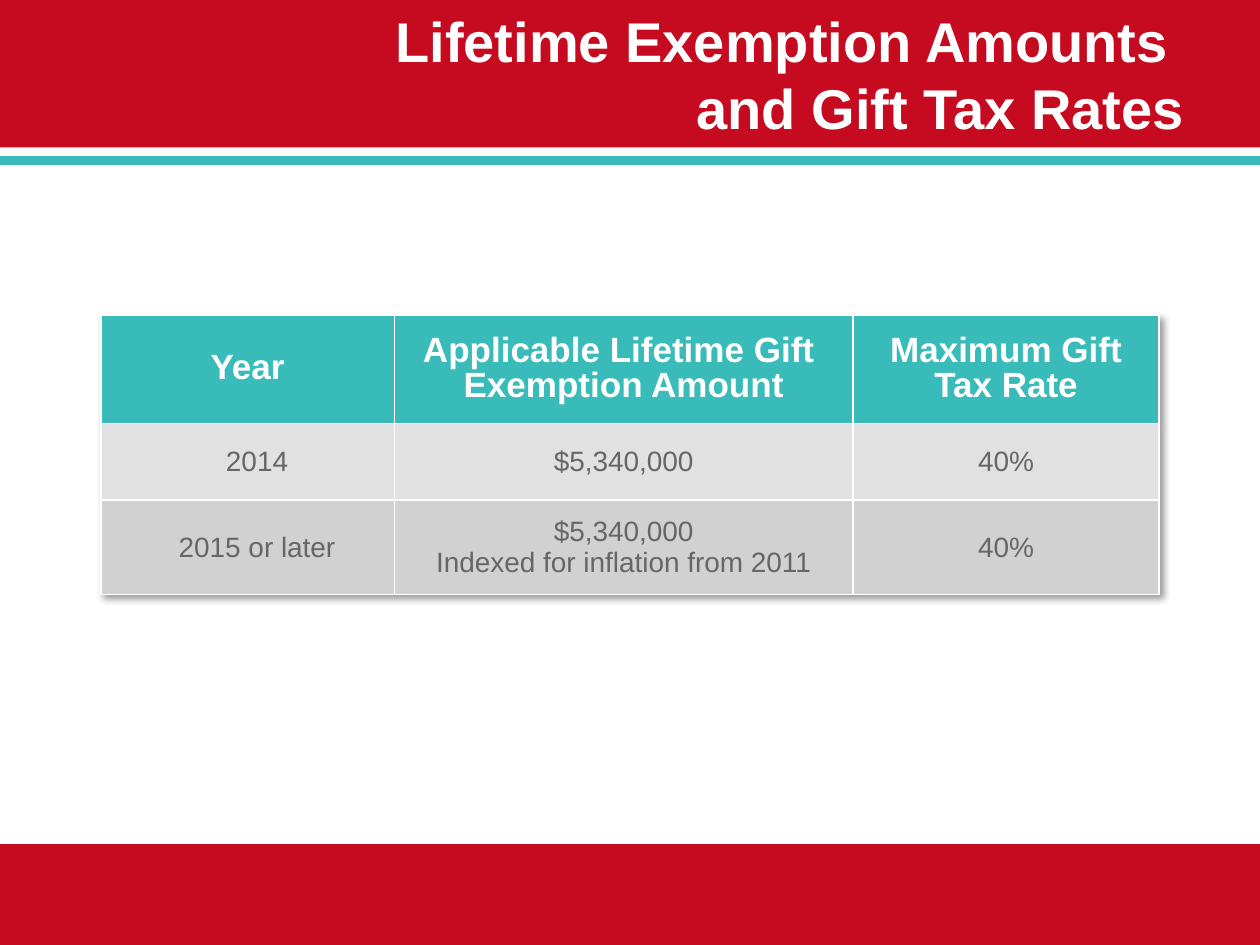
from lxml import etree
from pptx import Presentation
from pptx.dml.color import RGBColor
from pptx.enum.shapes import MSO_SHAPE
from pptx.enum.text import MSO_ANCHOR, PP_ALIGN
from pptx.oxml.ns import qn
from pptx.util import Inches, Pt

RECT = MSO_SHAPE.RECTANGLE
MIDDLE, BOTTOM = MSO_ANCHOR.MIDDLE, MSO_ANCHOR.BOTTOM
CENTER, RIGHT = PP_ALIGN.CENTER, PP_ALIGN.RIGHT

WIDE, HIGH = 10, 7.5
FONT = "Arial"
HUES = {"red": "C60B20", "teal": "38BBB9", "white": "FFFFFF",
        "text": "666666", "light": "E1E1E1", "dark": "D1D1D1",
        "black": "000000"}
BANDS = [(0, 1.17, "red"), (1.24, 0.07, "teal"), (6.7, 0.8, "red")]
COLS = [2.33, 3.64, 2.43]
ROWS = [0.86, 0.61, 0.75]
FILLS = ["teal", "light", "dark"]
DATA = [
    [["Year"], ["Applicable Lifetime Gift \vExemption Amount"],
     ["Maximum Gift\vTax Rate"]],
    [["2014"], ["$5,340,000"], ["40%"]],
    [["2015 or later"], ["$5,340,000", "Indexed for inflation from 2011"],
     ["40%"]],
]


def hue(name):
    return RGBColor.from_string(HUES[name])


def paint(fill, name):
    fill.solid()
    fill.fore_color.rgb = hue(name)


def write(frame, lines, size, color, bold, align, pitch=None):
    for i, line in enumerate(lines):
        para = frame.add_paragraph() if i else frame.paragraphs[0]
        para.alignment = align
        if pitch:
            para.line_spacing = pitch
        for j, part in enumerate(line.split("\v")):
            if j:
                para.add_line_break()
            run = para.add_run()
            run.text = part
            run.font.name = FONT
            run.font.size = Pt(size)
            run.font.bold = bold
            run.font.color.rgb = hue(color)


def add_band(slide, top, tall, color):
    band = slide.shapes.add_shape(
        RECT, 0, Inches(top), Inches(WIDE), Inches(tall))
    band.shadow.inherit = False
    paint(band.fill, color)
    band.line.fill.background()


def add_title(slide, text):
    box = slide.shapes.add_textbox(
        Inches(0.5), Inches(0.04), Inches(WIDE - 1), Inches(1.13))
    frame = box.text_frame
    frame.word_wrap = True
    frame.vertical_anchor = BOTTOM
    write(frame, [text], 32, "white", True, RIGHT)


def tint(node, name):
    return etree.SubElement(node, qn("a:srgbClr"), val=HUES[name])


def add_edges(cell, sides):
    props = cell._tc.get_or_add_tcPr()
    for i, side in enumerate(sides):
        edge = etree.Element(qn("a:ln" + side), w=str(Pt(1)))
        tint(etree.SubElement(edge, qn("a:solidFill")), "white")
        props.insert(i, edge)


def add_shade(table):
    list_ = etree.Element(qn("a:effectLst"))
    shade = etree.SubElement(
        list_, qn("a:outerShdw"), blurRad=str(Pt(4)), dist=str(Pt(3)),
        dir="2700000", algn="tl", rotWithShape="0")
    etree.SubElement(tint(shade, "black"), qn("a:alpha"), val="40000")
    table._tbl.tblPr.insert(0, list_)


def fill_cell(cell, row, col, lines):
    head = row == 0
    paint(cell.fill, FILLS[row])
    cell.vertical_anchor = MIDDLE
    if not head:
        cell.margin_left = Inches(0.05 if col else 0.2)
        cell.margin_right = Inches(0.05)
    write(cell.text_frame, lines, 20 if head else 16,
          "white" if head else "text", head, CENTER, 0.9 if head else None)
    shown = {"L": col > 0, "R": col < len(COLS) - 1, "T": row > 0, "B": True}
    add_edges(cell, [side for side, on in shown.items() if on])


def add_grid(slide):
    wide, tall = sum(COLS), sum(ROWS)
    table = slide.shapes.add_table(
        len(ROWS), len(COLS), Inches((WIDE - wide) / 2), Inches(HIGH / 3),
        Inches(wide), Inches(tall)).table
    for col, size in zip(table.columns, COLS):
        col.width = Inches(size)
    for row, size in zip(table.rows, ROWS):
        row.height = Inches(size)
    for r, row in enumerate(DATA):
        for c, lines in enumerate(row):
            fill_cell(table.cell(r, c), r, c, lines)
    add_shade(table)


def main():
    deck = Presentation()
    deck.slide_width, deck.slide_height = Inches(WIDE), Inches(HIGH)
    slide = deck.slides.add_slide(deck.slide_layouts[6])
    for band in BANDS:
        add_band(slide, *band)
    add_title(slide, "Lifetime Exemption Amounts \vand Gift Tax Rates")
    add_grid(slide)
    deck.save("out.pptx")


if __name__ == "__main__":
    main()
